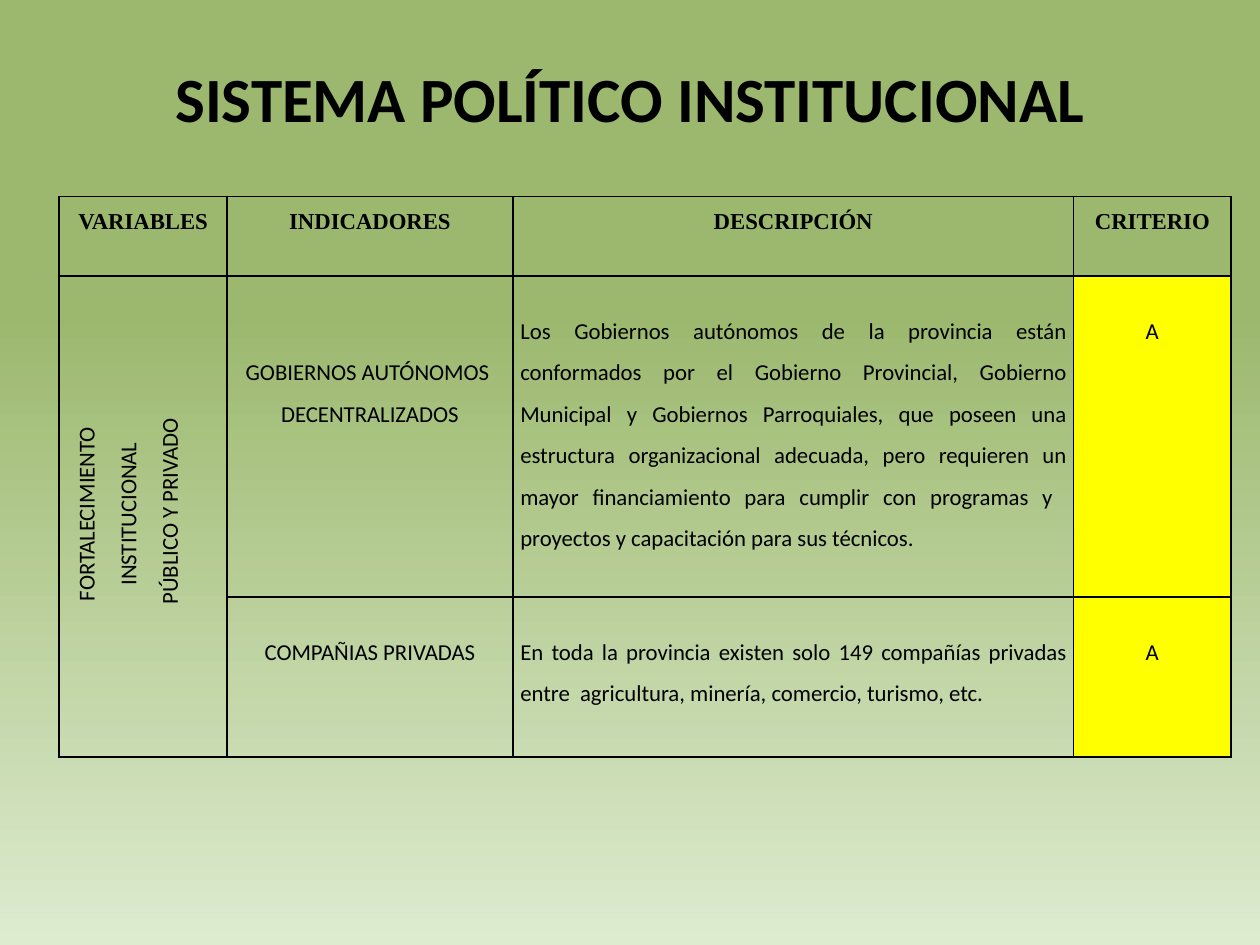
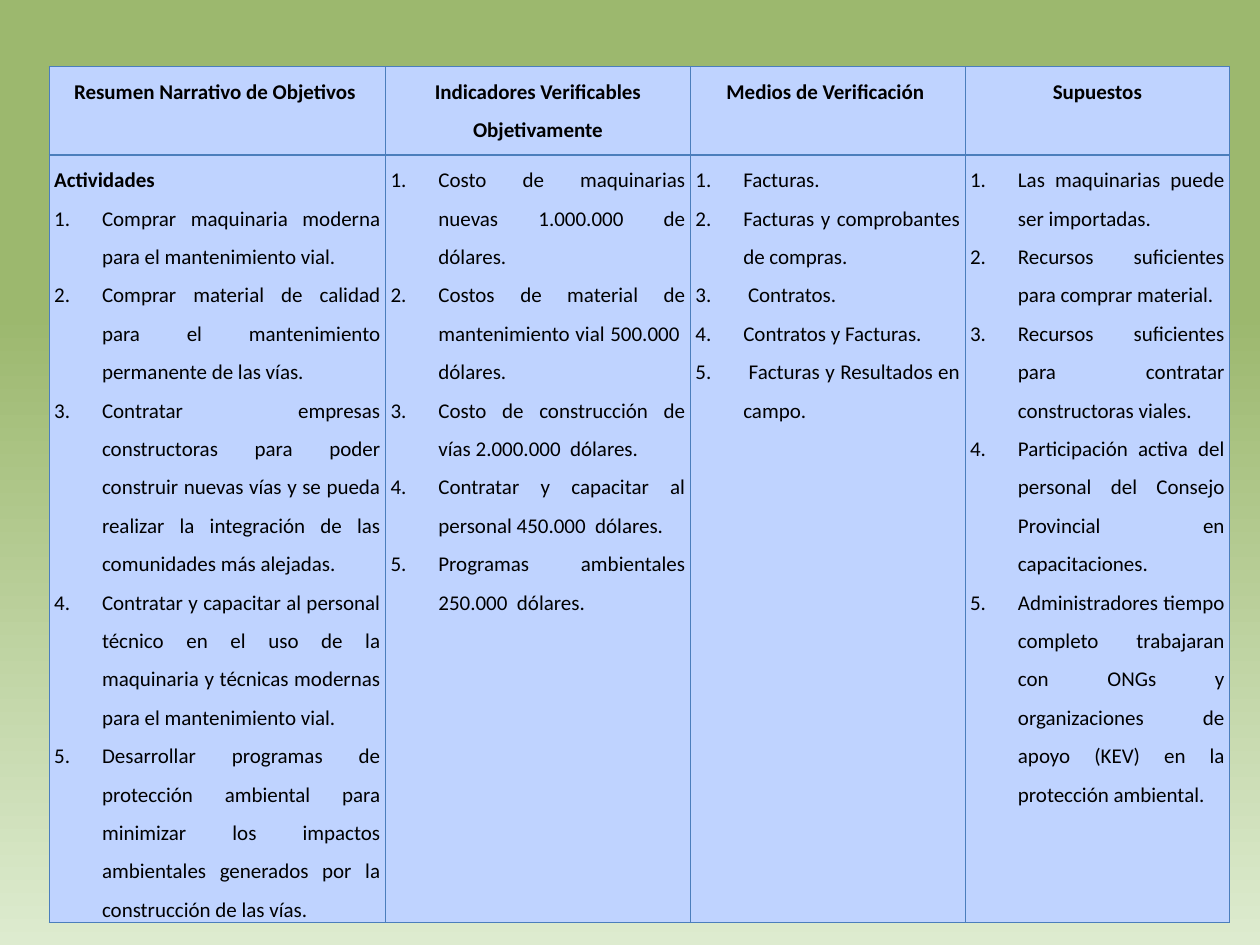
from dataclasses import dataclass

from lxml.etree import SubElement
from pptx import Presentation
from pptx.dml.color import RGBColor
from pptx.enum.text import MSO_ANCHOR, PP_ALIGN
from pptx.oxml.ns import qn
from pptx.util import Inches, Pt


@dataclass(frozen=True)
class Theme:
    ink: str = "000000"
    green: str = "9CB86E"
    pale_green: str = "DDEBCF"
    yellow: str = "FFFF00"
    pale_blue: str = "BFD3FF"
    blue_line: str = "4B7EBC"
    sans: str = "Calibri"
    serif: str = "Times New Roman"
    title_size: int = 36
    criteria_size: int = 13
    objectives_size: int = 12
    line_spacing: float = 1.5


THEME = Theme()
HEADING = {"bold": True, "align": PP_ALIGN.CENTER}
CENTERED = {"align": PP_ALIGN.CENTER}
JUSTIFIED = {"align": PP_ALIGN.JUSTIFY}
NUMBER_INDENT = 0.38

# Content
CRITERIA_HEADINGS = ["VARIABLES", "INDICADORES", "DESCRIPCIÓN", "CRITERIO"]
VARIABLE = "FORTALECIMIENTO \nINSTITUCIONAL \nPÚBLICO Y PRIVADO"
# Each row: indicator, space above the indicator, description, criterion
CRITERIA = [
    ("GOBIERNOS AUTÓNOMOS \nDECENTRALIZADOS", 0.55,
     "Los Gobiernos autónomos de la provincia están conformados por el "
     "Gobierno Provincial, Gobierno Municipal y Gobiernos Parroquiales, que "
     "poseen una estructura organizacional adecuada, pero requieren un mayor "
     "financiamiento para cumplir con programas y  proyectos y capacitación "
     "para sus técnicos.", "A"),
    ("COMPAÑIAS PRIVADAS", 0.22,
     "En toda la provincia existen solo 149 compañías privadas entre  "
     "agricultura, minería, comercio, turismo, etc.", "A"),
]
OBJECTIVES = {
    "Resumen Narrativo de Objetivos ": [
        "Comprar maquinaria moderna para el mantenimiento vial.",
        "Comprar material de calidad para el mantenimiento permanente de las "
        "vías.",
        "Contratar empresas constructoras para poder construir nuevas vías y "
        "se pueda realizar la integración de las comunidades más alejadas.",
        "Contratar y capacitar al personal técnico en el uso de la maquinaria "
        "y técnicas modernas para el mantenimiento vial.",
        "Desarrollar programas de protección ambiental para minimizar los "
        "impactos ambientales generados por la construcción de las vías.",
    ],
    "Indicadores Verificables Objetivamente": [
        "Costo de maquinarias nuevas 1.000.000 de dólares.",
        "Costos de material de mantenimiento vial 500.000  dólares.",
        "Costo de construcción de vías 2.000.000  dólares.",
        "Contratar y capacitar al personal 450.000  dólares.",
        "Programas ambientales 250.000  dólares.",
    ],
    "Medios de Verificación ": [
        "Facturas.",
        "Facturas y comprobantes de compras.",
        " Contratos.",
        "Contratos y Facturas.",
        " Facturas y Resultados en campo.",
    ],
    "Supuestos": [
        "Las maquinarias puede ser importadas.",
        "Recursos suficientes para comprar material.",
        "Recursos suficientes para contratar constructoras viales.",
        "Participación activa del personal del Consejo Provincial en "
        "capacitaciones.",
        "Administradores tiempo completo trabajaran con ONGs y organizaciones "
        "de apoyo (KEV) en la protección ambiental.",
    ],
}


def set_all(target, values):
    for attribute, value in values.items():
        setattr(target, attribute, value)


def paint_background(master):
    """Vertical green gradient shared by every slide."""
    fill = master.background.fill
    fill.gradient()
    fill.gradient_angle = 270
    stops = [(0.33, THEME.green), (1, THEME.pale_green)]
    for stop, (position, color) in zip(fill.gradient_stops, stops):
        stop.position = position
        stop.color.rgb = RGBColor.from_string(color)


def write(paragraph, text, size, font=THEME.sans, bold=False,
          align=PP_ALIGN.CENTER, spacing=THEME.line_spacing):
    paragraph.text = text
    set_all(paragraph, {"alignment": align, "line_spacing": spacing})
    for run in paragraph.runs:
        set_all(run.font, {"name": font, "size": Pt(size), "bold": bold})
        run.font.color.rgb = RGBColor.from_string(THEME.ink)
    # Line breaks keep the height of the text around them
    for line_break in paragraph._p.findall(qn("a:br")):
        SubElement(line_break, qn("a:rPr"), sz=str(size * 100))


def number(paragraph):
    """Hanging automatic number."""
    properties = paragraph._p.get_or_add_pPr()
    indent = Inches(NUMBER_INDENT)
    properties.set("marL", str(indent))
    properties.set("indent", str(-indent))
    SubElement(properties, qn("a:buAutoNum"), type="arabicPeriod")


def set_borders(cell, color, width):
    properties = cell._tc.get_or_add_tcPr()
    for place, side in enumerate(("lnL", "lnR", "lnT", "lnB")):
        line = SubElement(properties, qn(f"a:{side}"), w=str(Pt(width)))
        solid = SubElement(line, qn("a:solidFill"))
        SubElement(solid, qn("a:srgbClr"), val=color)
        properties.insert(place, line)


def fill_cell(cell, color):
    cell.fill.solid()
    cell.fill.fore_color.rgb = RGBColor.from_string(color)


def set_margins(cell, side, top=0):
    set_all(cell, {"margin_left": Inches(side), "margin_right": Inches(side),
                   "margin_top": Inches(top), "margin_bottom": 0})


def add_grid(slide, left, top, widths, heights, line_color, line_width):
    """Plain bordered table without banding."""
    frame = slide.shapes.add_table(
        len(heights), len(widths), Inches(left), Inches(top),
        Inches(sum(widths)), Inches(sum(heights)))
    table = frame.table
    set_all(table, {"first_row": False, "horz_banding": False})
    for column, width in zip(table.columns, widths):
        column.width = Inches(width)
    for row, height in zip(table.rows, heights):
        row.height = Inches(height)
    for cell in table.iter_cells():
        cell.fill.background()
        set_borders(cell, line_color, line_width)
    return table


def add_title(slide, text):
    title = slide.shapes.title
    set_all(title, {"left": Inches(0.5), "top": Inches(0.3),
                    "width": Inches(9), "height": Inches(0.95)})
    title.text_frame.vertical_anchor = MSO_ANCHOR.MIDDLE
    write(title.text_frame.paragraphs[0], text, THEME.title_size,
          bold=True, spacing=1)


def write_cell(cell, text, size, side, top=0, **look):
    set_margins(cell, side, top)
    write(cell.text_frame.paragraphs[0], text, size, **look)


def build_criteria(slide):
    add_title(slide, "SISTEMA POLÍTICO INSTITUCIONAL")
    table = add_grid(slide, 0.47, 1.56, [1.33, 2.27, 4.45, 1.25],
                     [0.63, 2.55, 1.27], THEME.ink, 1)
    size = THEME.criteria_size
    for column, heading in enumerate(CRITERIA_HEADINGS):
        write_cell(table.cell(0, column), heading, size, 0.07,
                   font=THEME.serif, **HEADING)

    # Variable, read upwards beside both indicators
    variable = table.cell(1, 0)
    variable.merge(table.cell(2, 0))
    write_cell(variable, VARIABLE, size, 0.06, **CENTERED)
    variable._tc.get_or_add_tcPr().set("vert", "vert270")
    variable.text_frame.paragraphs[0]._p.get_or_add_pPr().set(
        "marL", str(Inches(0.08)))

    for row, (indicator, drop, description, criterion) in enumerate(CRITERIA, 1):
        entries = [(indicator, drop, CENTERED),
                   (description, 0.22, JUSTIFIED),
                   (criterion, 0.22, CENTERED)]
        for column, (text, top, look) in enumerate(entries, 1):
            write_cell(table.cell(row, column), text, size, 0.06, top, **look)
        fill_cell(table.cell(row, 3), THEME.yellow)


def build_objectives(slide):
    table = add_grid(slide, 0.39, 0.53, [2.67, 2.42, 2.18, 2.1], [0.7, 6],
                     THEME.blue_line, 0.75)
    size = THEME.objectives_size
    for cell in table.iter_cells():
        fill_cell(cell, THEME.pale_blue)
    for column, (heading, items) in enumerate(OBJECTIVES.items()):
        write_cell(table.cell(0, column), heading, size, 0.03, **HEADING)
        body = table.cell(1, column)
        set_margins(body, 0.04)
        frame = body.text_frame
        paragraph = frame.paragraphs[0]
        # Only the first column opens with a subheading
        if column == 0:
            write(paragraph, "Actividades", size, bold=True, **JUSTIFIED)
            paragraph = frame.add_paragraph()
        for place, item in enumerate(items):
            if place:
                paragraph = frame.add_paragraph()
            write(paragraph, item, size, **JUSTIFIED)
            number(paragraph)


def main():
    deck = Presentation()
    set_all(deck, {"slide_width": Inches(10), "slide_height": Inches(7.5)})
    paint_background(deck.slide_master)
    title_only, blank = deck.slide_layouts[5], deck.slide_layouts[6]
    build_criteria(deck.slides.add_slide(title_only))
    build_objectives(deck.slides.add_slide(blank))
    deck.save("out.pptx")


if __name__ == "__main__":
    main()
